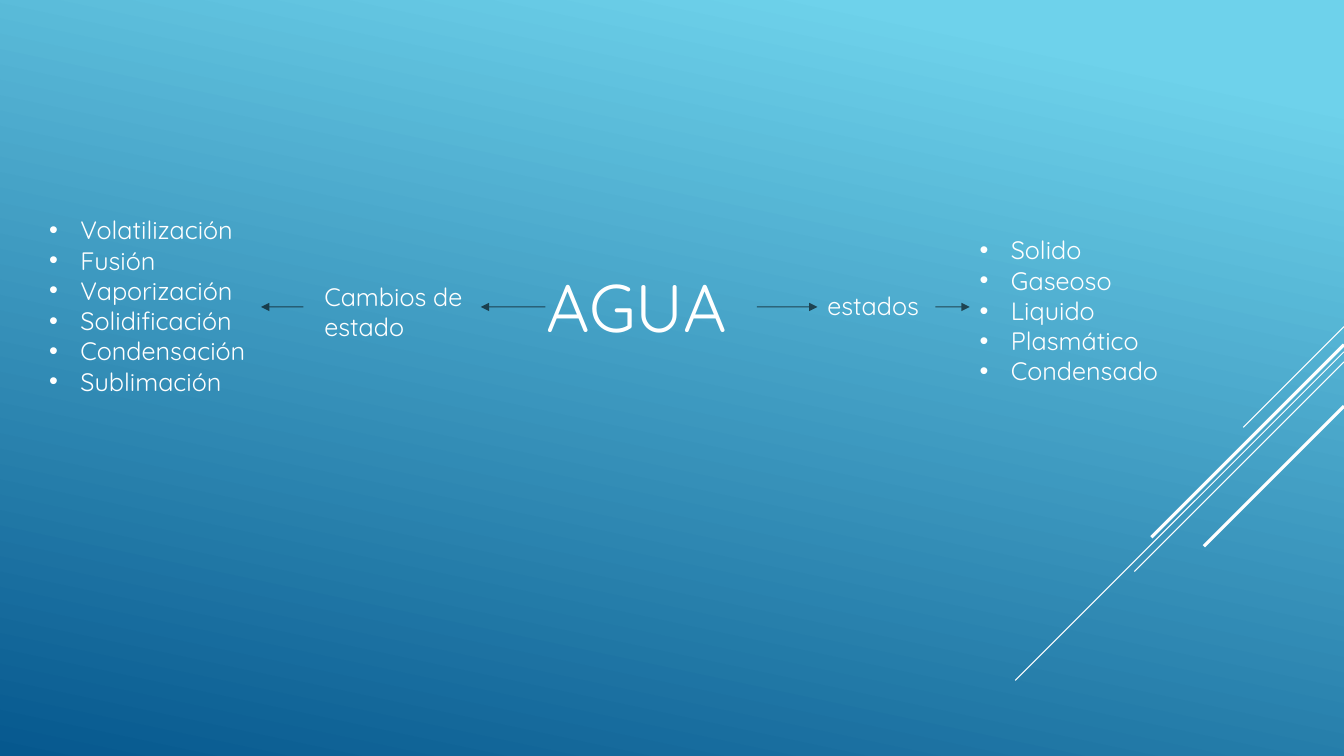
from pptx import Presentation
from pptx.dml.color import RGBColor as RGB
from pptx.enum.shapes import MSO_CONNECTOR as Conn
from pptx.enum.text import MSO_AUTO_SIZE as Fit, MSO_ANCHOR as Anchor
from pptx.oxml.ns import qn
from pptx.util import Inches, Pt
from lxml.etree import SubElement as Sub

WIDE, HIGH = Inches(13.33), Inches(7.5)
COLS, ROWS = 40, 30
HUES = {"sky": "6ED2EB", "deep": "06588E", "text": "FFFFFF", "arrow": "000000"}
FONT = "Quicksand"
MID = 12.18  # row shared by all arrows

# start row at the right edge, rows down, line width
RAYS = [
    (12.96, 4, 0.75),
    (13.96, 13.04, 0.75),
    (14.36, 8.32, 0.75),
    (13.68, 7.64, 2.25),
    (16.12, 5.56, 2.25),
]
ARROWS = [(16.23, 14.31), (9.03, 7.77), (22.53, 24.33), (27.84, 28.86)]
CHANGES = ["Volatilización", "Fusión", "Vaporización",
           "Solidificación", "Condensación", "Sublimación"]
STATES = ["Solido", "Gaseoso", "Liquido", "Plasmático", "Condensado"]


def col(n):
    return round(WIDE * n / COLS)


def row(n):
    return round(HIGH * n / ROWS)


def hue(name):
    return RGB.from_string(HUES[name])


def paint(slide):
    """Fill the background with the sky-to-deep gradient."""
    fill = slide.background.fill
    fill.gradient()
    fill.gradient_angle = 360 - 102
    for stop, name, place in zip(fill.gradient_stops, ("sky", "deep"), (0.1, 1)):
        stop.color.rgb = hue(name)
        stop.position = place


def line(slide, start, end, name, width):
    """Draw a shadowless line between two (column, row) points."""
    link = slide.shapes.add_connector(
        Conn.STRAIGHT, col(start[0]), row(start[1]), col(end[0]), row(end[1]))
    link.line.color.rgb = hue(name)
    link.line.width = Pt(width)
    Sub(link._element.spPr, qn("a:effectLst"))
    return link


def ray(slide, top, drop, width):
    """Draw a 45 degree line down from the right edge."""
    run = drop * (HIGH / ROWS) / (WIDE / COLS)
    line(slide, (COLS, top), (COLS - run, top + drop), "text", width)


def arrow(slide, start, end):
    ln = line(slide, (start, MID), (end, MID), "arrow", 0.75).line._get_or_add_ln()
    Sub(ln.find(".//" + qn("a:srgbClr")), qn("a:alpha"), val="60000")
    Sub(ln, qn("a:tailEnd"), type="triangle")


def bullet(para):
    props = para._p.get_or_add_pPr()
    inset = Inches(0.31)
    for key, val in {"marL": inset, "indent": -inset}.items():
        props.set(key, str(val))
    Sub(props, qn("a:buFont"), typeface="Arial")
    Sub(props, qn("a:buChar"), char="•")


def text(slide, box, items, size=18, dots=False):
    """Place one paragraph per item in a box of (column, row, columns, rows)."""
    x, y, w, h = box
    frame = slide.shapes.add_textbox(col(x), row(y), col(w), row(h)).text_frame
    look = {"word_wrap": True, "auto_size": Fit.SHAPE_TO_FIT_TEXT,
            "vertical_anchor": Anchor.TOP}
    for key, val in look.items():
        setattr(frame, key, val)
    for i, item in enumerate(items):
        para = frame.add_paragraph() if i else frame.paragraphs[0]
        run = para.add_run()
        run.text = item
        for key, val in {"name": FONT, "size": Pt(size)}.items():
            setattr(run.font, key, val)
        run.font.color.rgb = hue("text")
        if dots:
            bullet(para)


def main():
    deck = Presentation()
    deck.slide_width, deck.slide_height = WIDE, HIGH
    slide = deck.slides.add_slide(deck.slide_layouts[6])
    paint(slide)
    for spec_row in RAYS:
        ray(slide, *spec_row)
    text(slide, (15.96, 10.32, 16.11, 3.64), ["AGUA"], size=48)
    text(slide, (9.36, 10.96, 7.11, 4.04), ["Cambios de estado"])
    text(slide, (24.33, 11.32, 5.94, 1.6), ["estados"])
    text(slide, (1.17, 8.32, 7.17, 7.68), CHANGES, dots=True)
    text(slide, (28.86, 9.12, 7.62, 7.68), STATES, dots=True)
    for start, end in ARROWS:
        arrow(slide, start, end)
    deck.save("out.pptx")


if __name__ == "__main__":
    main()
